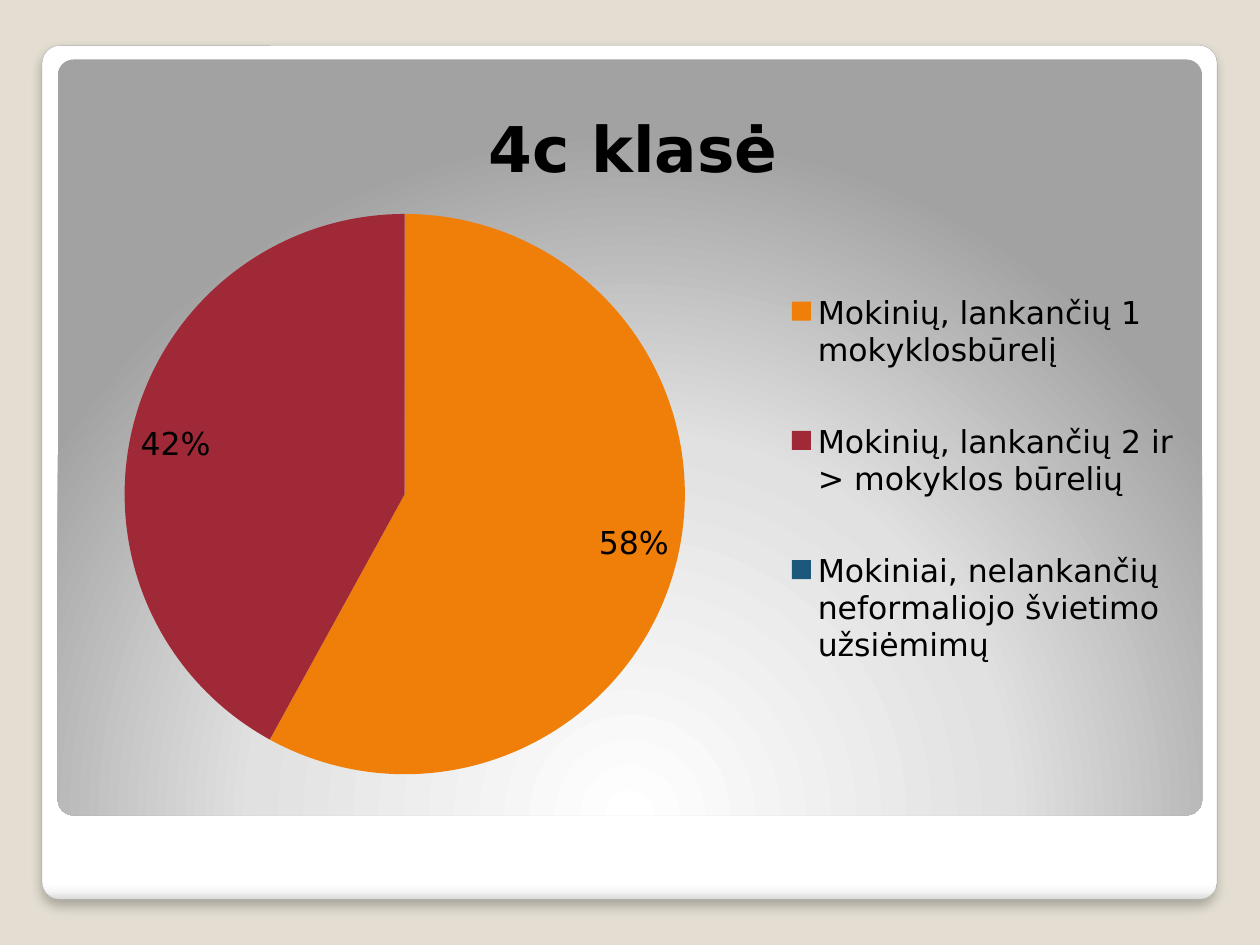
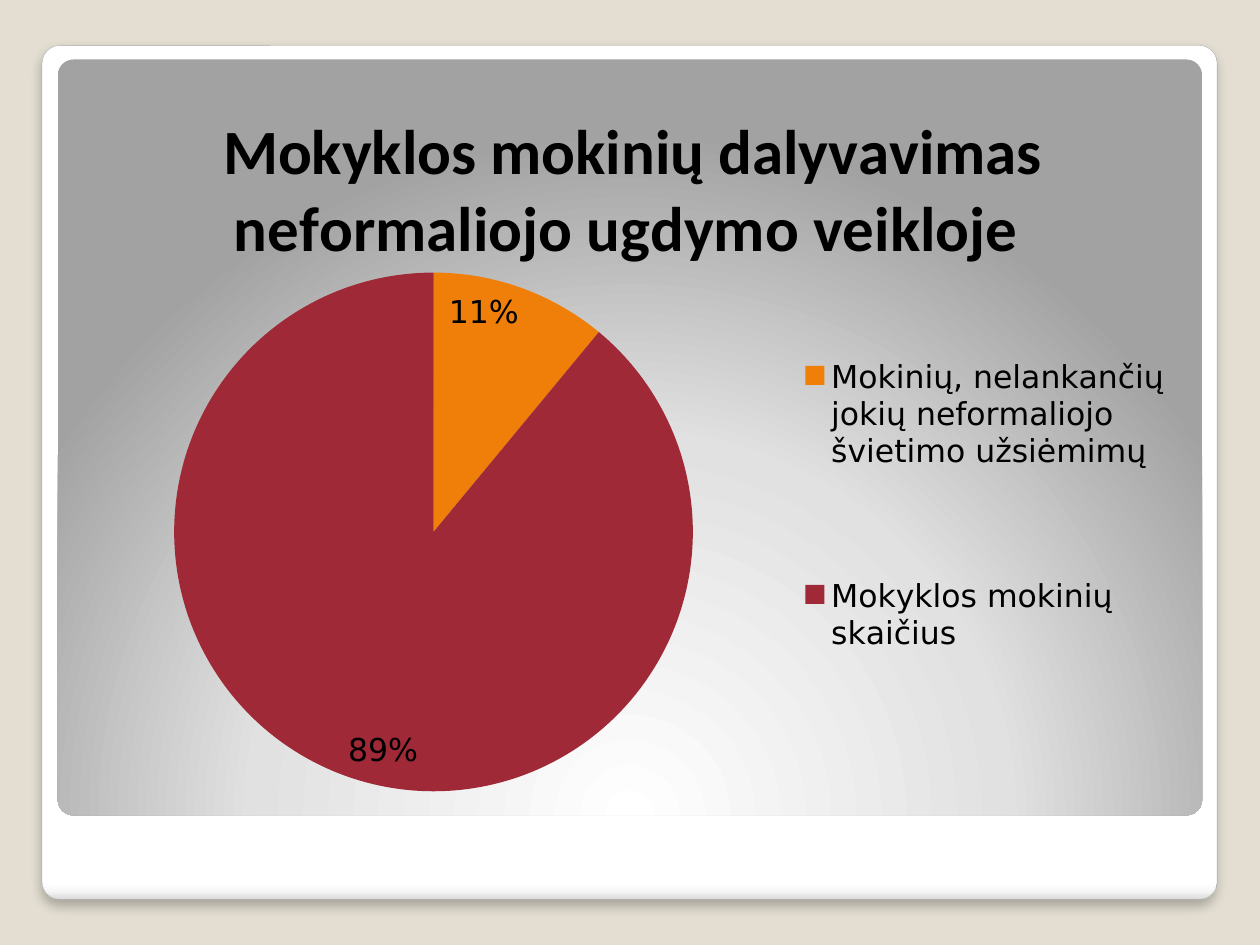
import pptx
import pptx.chart.data
import pptx.dml.color
import pptx.enum.chart
import pptx.enum.shapes
import pptx.oxml
import pptx.oxml.ns
import pptx.util

Pt = pptx.util.Pt
qn = pptx.oxml.ns.qn

HUES = {
    "back": "E3DED1", "edge": "A4A4A4", "text": "000000",
    "white": "FFFFFF", "mist": "F7F7F7", "fog": "DADADA",
    "pale": "E1E1E1", "gray": "A2A2A2",
    "orange": "F07F09", "red": "9F2936", "blue": "1B587C",
}
FONT = "DejaVu Sans"
SLICES = ("orange", "red", "blue")

# Boxes as left, top, width, height in points
CARD = (24, 26, 671.5, 488)
PANEL = (33, 34, 654, 432)
CHART = (39.6, 41.8, 644.4, 432.7)

# Plot and legend boxes are fractions of the chart
PIES = [
    {
        "title": "4c klasė", "font": FONT,
        "parts": [
            ("Mokinių, lankančių 1 mokyklosbūrelį", 58),
            ("Mokinių, lankančių 2 ir > mokyklos būrelių", 42),
            ("Mokiniai, nelankančių neformaliojo švietimo užsiėmimų", 0),
        ],
        "plot": (0.049, 0.186, 0.497, 0.74),
        "legend": (0.635, 0.22, 0.35, 0.634),
    },
    {
        "title": "Mokyklos mokinių dalyvavimas neformaliojo ugdymo veikloje ",
        "font": "Calibri",
        "parts": [
            ("Mokinių, nelankančių jokių neformaliojo švietimo užsiėmimų ", 11),
            ("Mokyklos mokinių skaičius ", 89),
        ],
        "plot": (0.093, 0.263, 0.46, 0.686),
        "legend": (0.637, 0.235, 0.35, 0.673),
    },
]


def rgb(name):
    return pptx.dml.color.RGBColor.from_string(HUES[name])


def xml(text, space):
    """Parse one element, declaring its namespace prefix."""
    head, rest = text.split(">", 1)
    close = "/" if head.endswith("/") else ""
    head = head.removesuffix("/")
    return pptx.oxml.parse_xml(f"{head} {pptx.oxml.ns.nsdecls(space)}{close}>{rest}")


def style(font, size, face=FONT, bold=False):
    font.name, font.size, font.bold = face, Pt(size), bold
    font.color.rgb = rgb("text")


def add_plate(slide, box, stops, course):
    """Rounded plate with a gradient fill and no line or shadow."""
    kind = pptx.enum.shapes.MSO_SHAPE.ROUNDED_RECTANGLE
    plate = slide.shapes.add_shape(kind, *map(Pt, box))
    plate.adjustments[0] = 0.021
    plate.shadow.inherit = False
    plate.line.fill.background()
    plate.fill.background()
    marks = "".join(
        f'<a:gs pos="{place * 1000}"><a:srgbClr val="{HUES[hue]}"/></a:gs>'
        for place, hue in stops)
    grade = xml(f'<a:gradFill rotWithShape="1"><a:gsLst>{marks}</a:gsLst>'
                f"{course}</a:gradFill>", "a")
    props = plate.element.spPr
    props.replace(props.find(qn("a:noFill")), grade)
    return plate


def add_frame(slide):
    """White card with a soft shadow, and the gray panel on it."""
    card = add_plate(
        slide, CARD,
        [(0, "white"), (98, "white"), (99, "mist"), (100, "fog")],
        '<a:lin ang="5400000" scaled="0"/>')
    card.line.color.rgb = rgb("edge")
    card.line.width = Pt(0.16)
    shade = xml(
        f'<a:outerShdw blurRad="{Pt(6)}" dist="{Pt(4)}" dir="5400000" '
        f'algn="t" rotWithShape="0"><a:srgbClr val="{HUES["text"]}">'
        '<a:alpha val="25000"/></a:srgbClr></a:outerShdw>', "a")
    card.element.spPr.find(qn("a:effectLst")).append(shade)
    add_plate(
        slide, PANEL, [(0, "white"), (55, "pale"), (100, "gray")],
        '<a:path path="circle"><a:fillToRect l="50000" t="175000" '
        'r="50000" b="-75000"/></a:path>')


def set_layout(part, spot, box, inner=False):
    """Give a chart part a fixed box, as child number spot."""
    for old in part.findall(qn("c:layout")):
        part.remove(old)
    target = '<c:layoutTarget val="inner"/>' if inner else ""
    modes = "".join(f'<c:{axis}Mode val="edge"/>' for axis in "xy")
    sizes = "".join(f'<c:{key} val="{size}"/>' for key, size in zip("xywh", box))
    part.insert(spot, xml(
        f"<c:layout><c:manualLayout>{target}{modes}{sizes}"
        "</c:manualLayout></c:layout>", "c"))


def add_pie(slide, box, pie):
    """Pie chart with its own title, percent labels and right legend."""
    names, counts = zip(*pie["parts"])
    data = pptx.chart.data.CategoryChartData()
    data.categories = names
    data.add_series("Series 1", counts)
    chart = slide.shapes.add_chart(
        pptx.enum.chart.XL_CHART_TYPE.PIE, *map(Pt, box), data).chart
    style(chart.font, 18)

    # Title
    chart.has_title = True
    run = chart.chart_title.text_frame.paragraphs[0].add_run()
    run.text = pie["title"]
    style(run.font, 36, pie["font"], True)
    chart.chart_title.include_in_layout = False

    # Slices
    plot = chart.plots[0]
    plot.vary_by_categories = True
    for spot, hue in enumerate(SLICES[:len(names)]):
        fill = plot.series[0].points[spot].format.fill
        fill.solid()
        fill.fore_color.rgb = rgb(hue)

    # Labels; the number format hides a zero
    plot.has_data_labels = True
    labels = plot.data_labels
    labels.show_percentage, labels.show_value = True, False
    labels.number_format, labels.number_format_is_linked = "0%;;", False
    labels.position = pptx.enum.chart.XL_LABEL_POSITION.INSIDE_END
    style(labels.font, 18)

    # Legend
    chart.has_legend = True
    legend = chart.legend
    legend.position = pptx.enum.chart.XL_LEGEND_POSITION.RIGHT
    legend.include_in_layout = False
    style(legend.font, 18)

    # Places inside the chart
    area = chart.element.find(".//" + qn("c:plotArea"))
    set_layout(area, 0, pie["plot"], True)
    set_layout(chart.element.find(".//" + qn("c:legend")), 1, pie["legend"])


def main():
    deck = pptx.Presentation()
    deck.slide_width, deck.slide_height = Pt(720), Pt(540)
    back = deck.slide_master.background.fill
    back.solid()
    back.fore_color.rgb = rgb("back")
    blank = deck.slide_layouts[6]
    for pie in PIES:
        slide = deck.slides.add_slide(blank)
        add_frame(slide)
        add_pie(slide, CHART, pie)
    deck.save("out.pptx")


if __name__ == "__main__":
    main()
